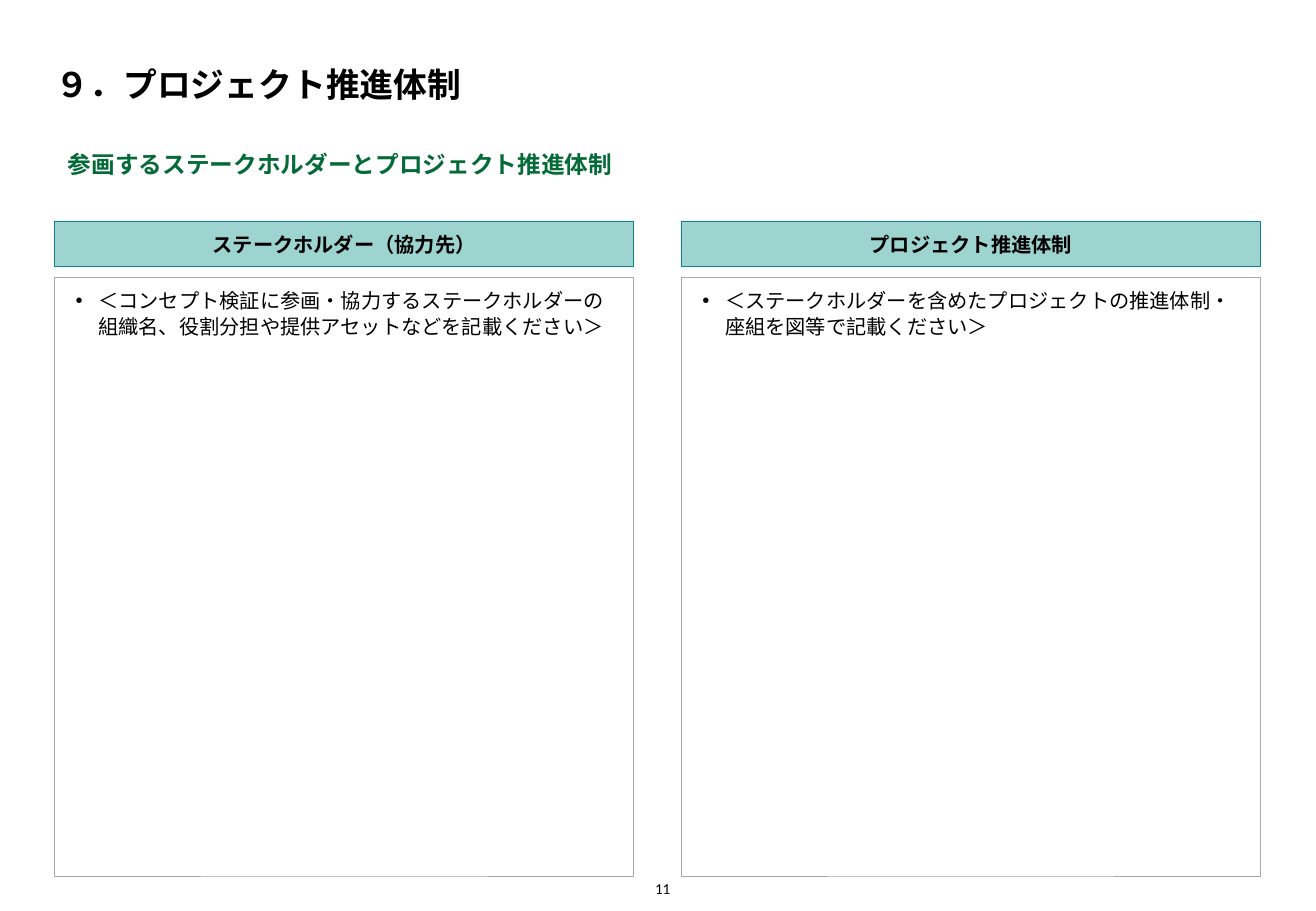
"""Build the project organisation slide with two headed panels."""
from dataclasses import dataclass

from lxml import etree
from pptx import Presentation
from pptx.dml.color import RGBColor
from pptx.enum import shapes, text
from pptx.oxml import ns
from pptx.util import Pt

COLOURS = {
    "black": "000000",
    "white": "FFFFFF",
    "green": "046A38",
    "header": "9DD4CF",
    "header_line": "0D8390",
    "panel_line": "A7A8AA",
}
COLUMN_WIDTH = 343
HEADER_TOP, HEADER_HEIGHT = 131, 27
PANEL_TOP, PANEL_HEIGHT = 164.3, 355


@dataclass(frozen=True)
class Column:
    left: float
    heading: str
    guidance: str


COLUMNS = [
    Column(32.5, "ステークホルダー（協力先）",
           "＜コンセプト検証に参画・協力するステークホルダーの組織名、役割分担や提供アセットなどを記載ください＞"),
    Column(404, "プロジェクト推進体制",
           "＜ステークホルダーを含めたプロジェクトの推進体制・座組を図等で記載ください＞"),
]


def colour(name: str) -> RGBColor:
    return RGBColor.from_string(COLOURS[name])


def place(shape, left: float, top: float, width: float, height: float) -> None:
    shape.left, shape.top, shape.width, shape.height = map(Pt, (left, top, width, height))


def set_margins(frame, horizontal: float, vertical: float) -> None:
    frame.margin_left = frame.margin_right = Pt(horizontal)
    frame.margin_top = frame.margin_bottom = Pt(vertical)


def set_bullet(paragraph, character: str = "", margin: float = 0, indent: float = 0) -> None:
    properties = paragraph._p.get_or_add_pPr()
    properties.set("marL", str(Pt(margin)))
    properties.set("indent", str(Pt(indent)))
    if character:
        etree.SubElement(properties, ns.qn("a:buFont"), typeface="Arial")
        etree.SubElement(properties, ns.qn("a:buChar"), char=character)
    else:
        etree.SubElement(properties, ns.qn("a:buNone"))


def format_paragraph(paragraph, align, size: float, font_name: str,
                     bold: bool = False, font_colour: str = "black") -> None:
    paragraph.alignment = align
    paragraph.space_before = Pt(0)
    font = paragraph.font
    font.size, font.name, font.bold = Pt(size), font_name, bold
    font.color.rgb = colour(font_colour)


def add_box(slide, left: float, top: float, height: float, fill: str, line: str,
            content: str, anchor):
    shape = slide.shapes.add_shape(shapes.MSO_SHAPE.RECTANGLE, Pt(left), Pt(top),
                                   Pt(COLUMN_WIDTH), Pt(height))
    shape.shadow.inherit = False
    shape.fill.solid()
    shape.fill.fore_color.rgb = colour(fill)
    shape.line.color.rgb = colour(line)
    shape.line.width = Pt(0.5)
    frame = shape.text_frame
    frame.word_wrap = True
    frame.vertical_anchor = anchor
    set_margins(frame, 5.76, 5.76)
    paragraph = frame.paragraphs[0]
    paragraph.text = content
    paragraph.line_spacing = 1.06
    return paragraph


def add_column(slide, column: Column) -> None:
    heading = add_box(slide, column.left, HEADER_TOP, HEADER_HEIGHT, "header",
                      "header_line", column.heading, text.MSO_ANCHOR.MIDDLE)
    format_paragraph(heading, text.PP_ALIGN.CENTER, 12, "Arial", bold=True)
    guidance = add_box(slide, column.left, PANEL_TOP, PANEL_HEIGHT, "white",
                       "panel_line", column.guidance, text.MSO_ANCHOR.TOP)
    set_bullet(guidance, "•", 20, -13.5)
    format_paragraph(guidance, text.PP_ALIGN.LEFT, 12, "Arial")


def add_titles(slide) -> None:
    title = slide.shapes.title
    place(title, 33, 10.8, 714, 51)
    frame = title.text_frame
    frame.text = "９．プロジェクト推進体制"
    frame.auto_size = text.MSO_AUTO_SIZE.NONE
    frame.vertical_anchor = text.MSO_ANCHOR.BOTTOM
    set_margins(frame, 0, 0)
    format_paragraph(frame.paragraphs[0], text.PP_ALIGN.LEFT, 20, "Calibri", bold=True)

    subtitle = slide.placeholders[1]
    place(subtitle, 33, 80, COLUMN_WIDTH, 34)
    frame = subtitle.text_frame
    frame.text = "参画するステークホルダーとプロジェクト推進体制"
    frame.auto_size = text.MSO_AUTO_SIZE.NONE
    frame.word_wrap = False
    frame.vertical_anchor = text.MSO_ANCHOR.MIDDLE
    set_bullet(frame.paragraphs[0])
    format_paragraph(frame.paragraphs[0], text.PP_ALIGN.LEFT, 14, "Calibri",
                     bold=True, font_colour="green")


def add_page_number(slide) -> None:
    frame = slide.shapes.add_textbox(Pt(383), Pt(518.4), Pt(14.4), Pt(13.7)).text_frame
    frame.text = "11"
    frame.word_wrap = False
    frame.vertical_anchor = text.MSO_ANCHOR.BOTTOM
    set_margins(frame, 0, 0)
    format_paragraph(frame.paragraphs[0], text.PP_ALIGN.RIGHT, 9, "Calibri")


def main() -> None:
    presentation = Presentation()
    presentation.slide_width, presentation.slide_height = Pt(780), Pt(540)
    slide = presentation.slides.add_slide(presentation.slide_layouts[1])
    add_titles(slide)
    for column in COLUMNS:
        add_column(slide, column)
    add_page_number(slide)
    presentation.save("out.pptx")


if __name__ == "__main__":
    main()
